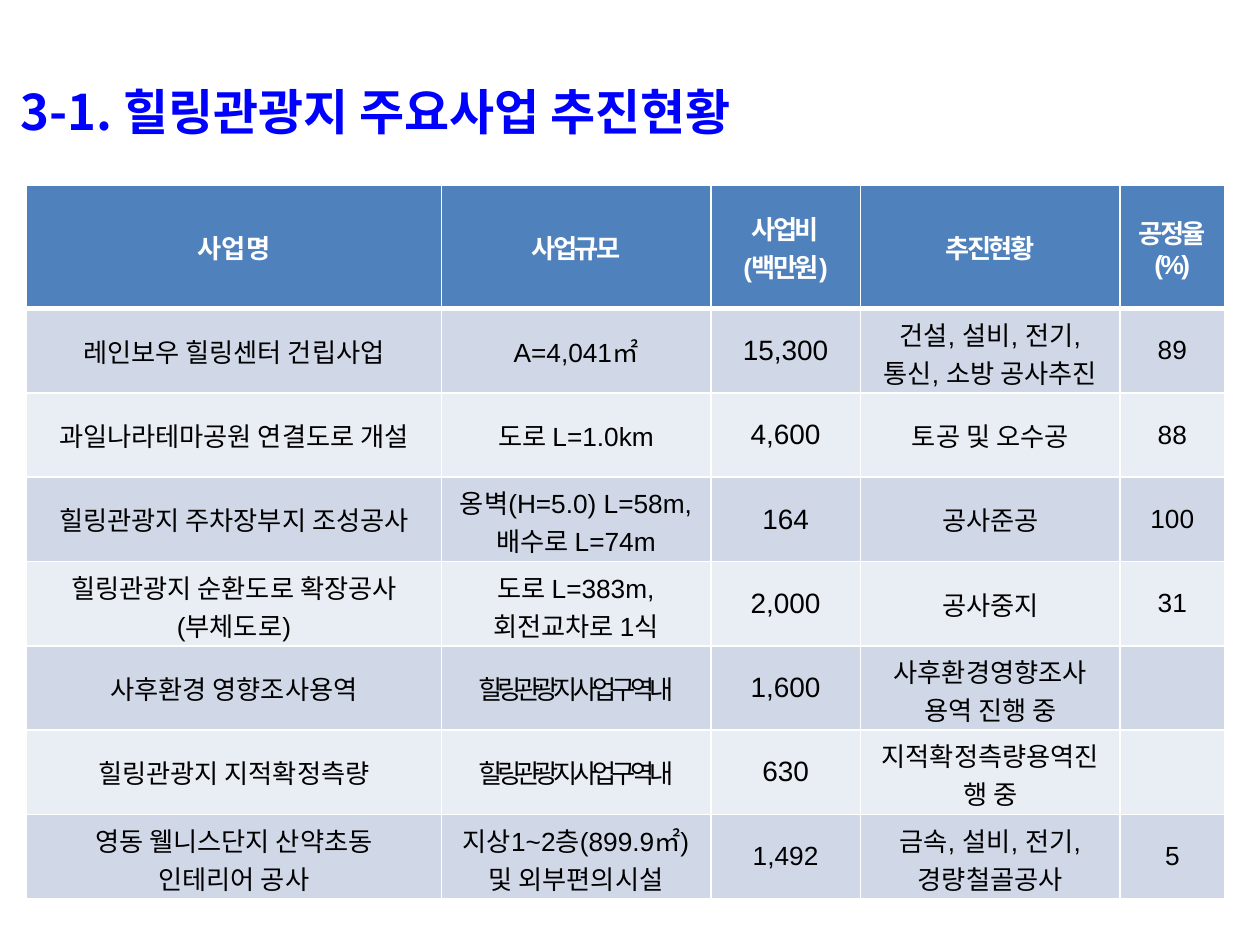
from dataclasses import dataclass

from lxml import etree
from pptx import Presentation
from pptx.dml.color import RGBColor
from pptx.enum.text import MSO_ANCHOR, PP_ALIGN
from pptx.oxml.ns import qn
from pptx.util import Pt

CENTER = PP_ALIGN.CENTER
LEFT = PP_ALIGN.LEFT
MIDDLE = MSO_ANCHOR.MIDDLE


@dataclass(frozen=True)
class Theme:
    latin: str = "Arial"
    korean: str = "Noto Sans CJK KR"
    title_color: str = "0000FF"
    white: str = "FFFFFF"
    black: str = "000000"
    header_fill: str = "4F81BD"
    bands: tuple = ("D0D8E8", "E9EDF4")
    title_size: int = 28
    body_size: int = 15
    cost_size: int = 16


THEME = Theme()
COLUMN_WIDTHS = (237, 154, 85.5, 148.5, 59.5)
HEADER_HEIGHT = 70.5
ROW_HEIGHT = 48.2
COST_COLUMN = 2
SITE_WIDE = "힐링관광지 사업구역 내"

HEADERS = ("사 업 명", "사업규모", "사업비\n(백만원)", "추진현황", "공정율\n(%)")
PROJECTS = (
    ("레인보우 힐링센터 건립사업", "A=4,041㎡", "15,300",
     "건설, 설비, 전기, 통신, 소방 공사추진", "89"),
    ("과일나라테마공원 연결도로 개설", "도로 L=1.0km", "4,600", "토공 및 오수공", "88"),
    ("힐링관광지 주차장부지 조성공사", "옹벽(H=5.0) L=58m,\n배수로 L=74m", "164",
     "공사준공", "100"),
    ("힐링관광지 순환도로 확장공사\n(부체도로)", "도로 L=383m,\n회전교차로 1식", "2,000",
     "공사중지", "31"),
    ("사후환경 영향조사용역", SITE_WIDE, "1,600", "사후환경영향조사 용역 진행 중", ""),
    ("힐링관광지 지적확정측량", SITE_WIDE, "630", "지적확정측량용역진행 중", ""),
    ("영동 웰니스단지 산약초동\n인테리어 공사", "지상1~2층(899.9㎡) 및 외부편의시설", "1,492",
     "금속, 설비, 전기, 경량철골공사", "5"),
)


def write_text(frame, text, *, size=THEME.body_size, color=THEME.black, bold=False,
               latin=THEME.latin, align=CENTER, tracking=0, line_spacing=None):
    for number, line in enumerate(text.split("\n")):
        paragraph = frame.add_paragraph() if number else frame.paragraphs[0]
        paragraph.alignment = align
        if line_spacing:
            paragraph.line_spacing = line_spacing
        run = paragraph.add_run()
        run.text = line
        run.font.size = Pt(size)
        run.font.bold = bold
        run.font.name = latin
        run.font.color.rgb = RGBColor.from_string(color)
        properties = run.font._element
        etree.SubElement(properties, qn("a:ea")).set("typeface", THEME.korean)
        if tracking:
            properties.set("spc", str(int(tracking * 100)))


def set_borders(cell, top=1, bottom=1):
    properties = cell._tc.get_or_add_tcPr()
    widths = {"a:lnL": 1, "a:lnR": 1, "a:lnT": top, "a:lnB": bottom}
    for position, (side, width) in enumerate(widths.items()):
        border = etree.Element(qn(side), w=str(Pt(width)))
        fill = etree.SubElement(border, qn("a:solidFill"))
        etree.SubElement(fill, qn("a:srgbClr")).set("val", THEME.white)
        properties.insert(position, border)


def fill_cell(cell, text, fill, top=1, bottom=1, **text_format):
    cell.fill.solid()
    cell.fill.fore_color.rgb = RGBColor.from_string(fill)
    cell.vertical_anchor = MIDDLE
    set_borders(cell, top, bottom)
    if text:
        write_text(cell.text_frame, text, **text_format)


def add_title(slide):
    heading = slide.shapes.add_textbox(Pt(4.5), Pt(26), Pt(695), Pt(58)).text_frame
    heading.word_wrap = True
    write_text(heading, "3-1. 힐링관광지 주요사업 추진현황", size=THEME.title_size,
               color=THEME.title_color, bold=True, latin=THEME.korean,
               align=LEFT, line_spacing=1.5)


def add_project_table(slide):
    table_height = HEADER_HEIGHT + ROW_HEIGHT * len(PROJECTS)
    projects = slide.shapes.add_table(
        len(PROJECTS) + 1, len(HEADERS), Pt(15.2), Pt(105.8),
        Pt(sum(COLUMN_WIDTHS)), Pt(table_height)).table
    for column, width in zip(projects.columns, COLUMN_WIDTHS):
        column.width = Pt(width)
    for number, row in enumerate(projects.rows):
        row.height = Pt(ROW_HEIGHT if number else HEADER_HEIGHT)

    for column, label in enumerate(HEADERS):
        fill_cell(projects.cell(0, column), label, THEME.header_fill, bottom=3,
                  color=THEME.white, bold=True, tracking=-1.5)
    for number, project in enumerate(PROJECTS):
        band = THEME.bands[number % 2]
        for column, value in enumerate(project):
            fill_cell(projects.cell(number + 1, column), value, band,
                      top=1 if number else 3,
                      size=(THEME.cost_size
                            if column == COST_COLUMN and project is not PROJECTS[-1]
                            else THEME.body_size),
                      tracking=-3 if value == SITE_WIDE else 0)


def main():
    deck = Presentation()
    deck.slide_width, deck.slide_height = Pt(720), Pt(540)
    slide = deck.slides.add_slide(deck.slide_layouts[6])
    add_title(slide)
    add_project_table(slide)
    deck.save("out.pptx")


if __name__ == "__main__":
    main()
